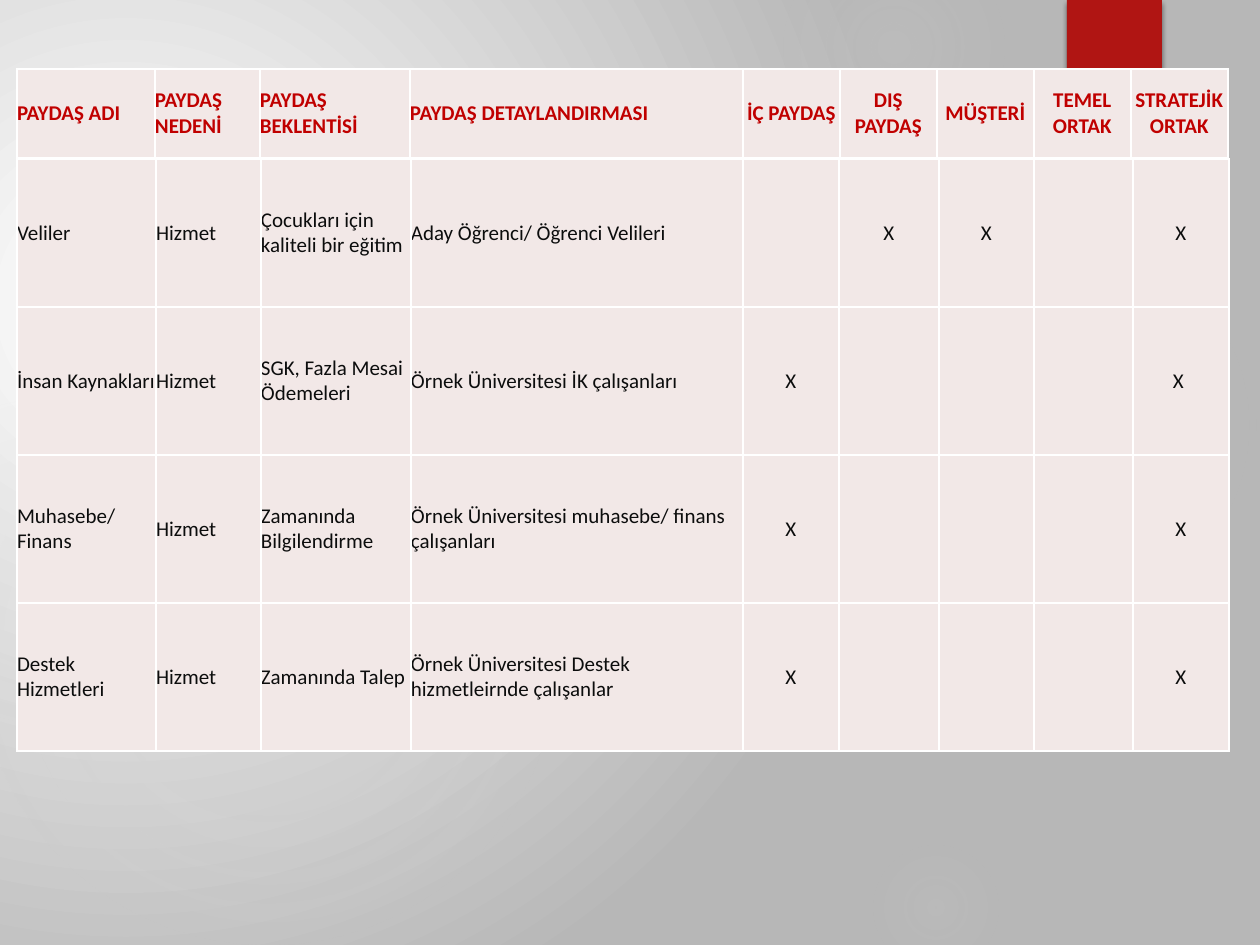
from dataclasses import dataclass
from typing import Any

from pptx import Presentation
from pptx.dml.color import RGBColor
from pptx.enum.shapes import MSO_SHAPE
from pptx.enum.text import MSO_ANCHOR, PP_ALIGN
from pptx.oxml import parse_xml
from pptx.oxml.ns import nsdecls, qn
from pptx.util import Pt

EMU_PER_PX = 914400 / 126
OVAL, RECTANGLE = MSO_SHAPE.OVAL, MSO_SHAPE.RECTANGLE
MIDDLE = MSO_ANCHOR.MIDDLE
LEFT, CENTER = PP_ALIGN.LEFT, PP_ALIGN.CENTER

WHITE = RGBColor(0xFF, 0xFF, 0xFF)
GREY = RGBColor(0xB7, 0xB7, 0xB7)
GLOW_GREY = RGBColor(0xD9, 0xD9, 0xD9)
TAB_RED = RGBColor(0xB0, 0x15, 0x13)
HEADER_RED = RGBColor(0xC0, 0x00, 0x00)
INK = RGBColor(0x0C, 0x0D, 0x0D)
CELL_PINK = RGBColor(0xF2, 0xE8, 0xE7)

FONT = "Calibri"
TEXT_COLUMNS = 4  # the columns after these are centred


@dataclass(frozen=True)
class Stop:
    position: int
    color: RGBColor
    opacity: int = 100


@dataclass(frozen=True)
class Glow:
    left: int
    top: int
    size: int
    inner: int  # opacity at the centre
    middle: int  # opacity at 36 %
    end: int  # position where the glow has faded out


@dataclass(frozen=True)
class Grid:
    top: int
    row_height: int
    columns: list[int]
    rows: list[list[str]]
    color: RGBColor
    bold: bool = False


GLOWS = [
    Glow(868, 231, 388, 7, 6, 69),
    Glow(784, -63, 220, 14, 7, 73),
    Glow(868, 840, 136, 9, 5, 66),
    Glow(-21, 368, 577, 11, 10, 75),
    Glow(-116, 399, 325, 8, 8, 72),
]

TABLE_LEFT = 17
BODY = Grid(
    159, 148, [139, 105, 150, 332, 96, 100, 95, 99, 96],
    [
        ["Veliler", "Hizmet", "Çocukları için kaliteli bir eğitim",
         "Aday Öğrenci/ Öğrenci Velileri", "", "X", "X", "", "X"],
        ["İnsan Kaynakları", "Hizmet", "SGK, Fazla Mesai Ödemeleri",
         "Örnek Üniversitesi İK çalışanları", "X", "", "", "", "X "],
        ["Muhasebe/\nFinans", "Hizmet", "Zamanında Bilgilendirme",
         "Örnek Üniversitesi muhasebe/ finans çalışanları", "X", "", "", "", "X"],
        ["Destek Hizmetleri", "Hizmet", "Zamanında Talep",
         "Örnek Üniversitesi Destek hizmetleirnde çalışanlar", "X", "", "", "", "X"],
    ],
    INK,
)
HEADER = Grid(
    69, 89, [138, 105, 150, 333] + [97] * 5,
    [["PAYDAŞ ADI", "PAYDAŞ NEDENİ", "PAYDAŞ BEKLENTİSİ", "PAYDAŞ DETAYLANDIRMASI",
      "İÇ PAYDAŞ", "DIŞ PAYDAŞ", "MÜŞTERİ", "TEMEL ORTAK", "STRATEJİK ORTAK"]],
    HEADER_RED, bold=True,
)


def px(length: int) -> int:
    return round(length * EMU_PER_PX)


def set_radial_fill(fill: Any, element: Any, stops: list[Stop],
                    focus: tuple[int, int, int, int]) -> None:
    """Fill with a circular gradient; focus is left, top, right, bottom in percent."""
    fill.gradient()
    old = element.find(".//" + qn("a:gradFill"))
    stop_xml = "".join(
        f'<a:gs pos="{stop.position * 1000}"><a:srgbClr val="{stop.color}">'
        f'<a:alpha val="{stop.opacity * 1000}"/></a:srgbClr></a:gs>'
        for stop in stops)
    left, top, right, bottom = (side * 1000 for side in focus)
    old.getparent().replace(old, parse_xml(
        f'<a:gradFill {nsdecls("a")} rotWithShape="1"><a:gsLst>{stop_xml}</a:gsLst>'
        f'<a:path path="circle"><a:fillToRect l="{left}" t="{top}" r="{right}" '
        f'b="{bottom}"/></a:path></a:gradFill>'))


def add_plain_shape(page: Any, kind: Any, left: int, top: int,
                    width: int, height: int) -> Any:
    shape = page.shapes.add_shape(kind, px(left), px(top), px(width), px(height))
    shape.shadow.inherit = False
    shape.line.fill.background()
    return shape


def add_glow(page: Any, glow: Glow) -> None:
    shape = add_plain_shape(page, OVAL, glow.left, glow.top, glow.size, glow.size)
    stops = [Stop(0, GLOW_GREY, glow.inner), Stop(36, GLOW_GREY, glow.middle),
             Stop(glow.end, GLOW_GREY, 0)]
    set_radial_fill(shape.fill, shape.element, stops, (50, 50, 50, 50))


def add_red_tab(page: Any) -> None:
    tab = add_plain_shape(page, RECTANGLE, 1067, 0, 95, 151)
    tab.fill.solid()
    tab.fill.fore_color.rgb = TAB_RED
    effects = tab.element.spPr.find(qn("a:effectLst"))
    effects.append(parse_xml(
        f'<a:outerShdw {nsdecls("a")} blurRad="{Pt(3)}" dist="{Pt(2)}" dir="5400000">'
        '<a:srgbClr val="000000"><a:alpha val="45000"/></a:srgbClr></a:outerShdw>'))


def set_borders(cell: Any) -> None:
    properties = cell._tc.get_or_add_tcPr()
    for index, side in enumerate(("lnL", "lnR", "lnT", "lnB")):
        properties.insert(index, parse_xml(
            f'<a:{side} {nsdecls("a")} w="{Pt(1)}"><a:solidFill>'
            f'<a:srgbClr val="{WHITE}"/></a:solidFill></a:{side}>'))


def write_cell(cell: Any, text: str, *, color: RGBColor, bold: bool, align: Any) -> None:
    cell.fill.solid()
    cell.fill.fore_color.rgb = CELL_PINK
    cell.vertical_anchor = MIDDLE
    cell.margin_left = cell.margin_right = cell.margin_top = cell.margin_bottom = 0
    set_borders(cell)
    para = cell.text_frame.paragraphs[0]
    para.text = text
    para.alignment = align
    for span in para.runs:
        span.font.name = FONT
        span.font.size = Pt(12)
        span.font.bold = bold
        span.font.color.rgb = color


def add_grid(page: Any, grid: Grid) -> None:
    frame = page.shapes.add_table(
        len(grid.rows), len(grid.columns), px(TABLE_LEFT), px(grid.top),
        px(sum(grid.columns)), px(grid.row_height * len(grid.rows)))
    table = frame.table
    table.first_row = table.horz_banding = False
    for column, width in zip(table.columns, grid.columns):
        column.width = px(width)
    for row, texts in zip(table.rows, grid.rows):
        row.height = px(grid.row_height)
        for index, text in enumerate(texts):
            write_cell(row.cells[index], text, color=grid.color, bold=grid.bold,
                       align=LEFT if index < TEXT_COLUMNS else CENTER)


def main() -> None:
    deck = Presentation()
    deck.slide_width, deck.slide_height = px(1260), px(945)
    page = deck.slides.add_slide(deck.slide_layouts[6])

    # Background with soft glows and the red tab
    set_radial_fill(page.background.fill, page.element,
                    [Stop(0, WHITE), Stop(100, GREY)], (45, 65, 125, 100))
    for glow in GLOWS:
        add_glow(page, glow)
    add_red_tab(page)

    # Stakeholder rows and their header strip
    for grid in (BODY, HEADER):
        add_grid(page, grid)

    deck.save("out.pptx")


if __name__ == "__main__":
    main()
